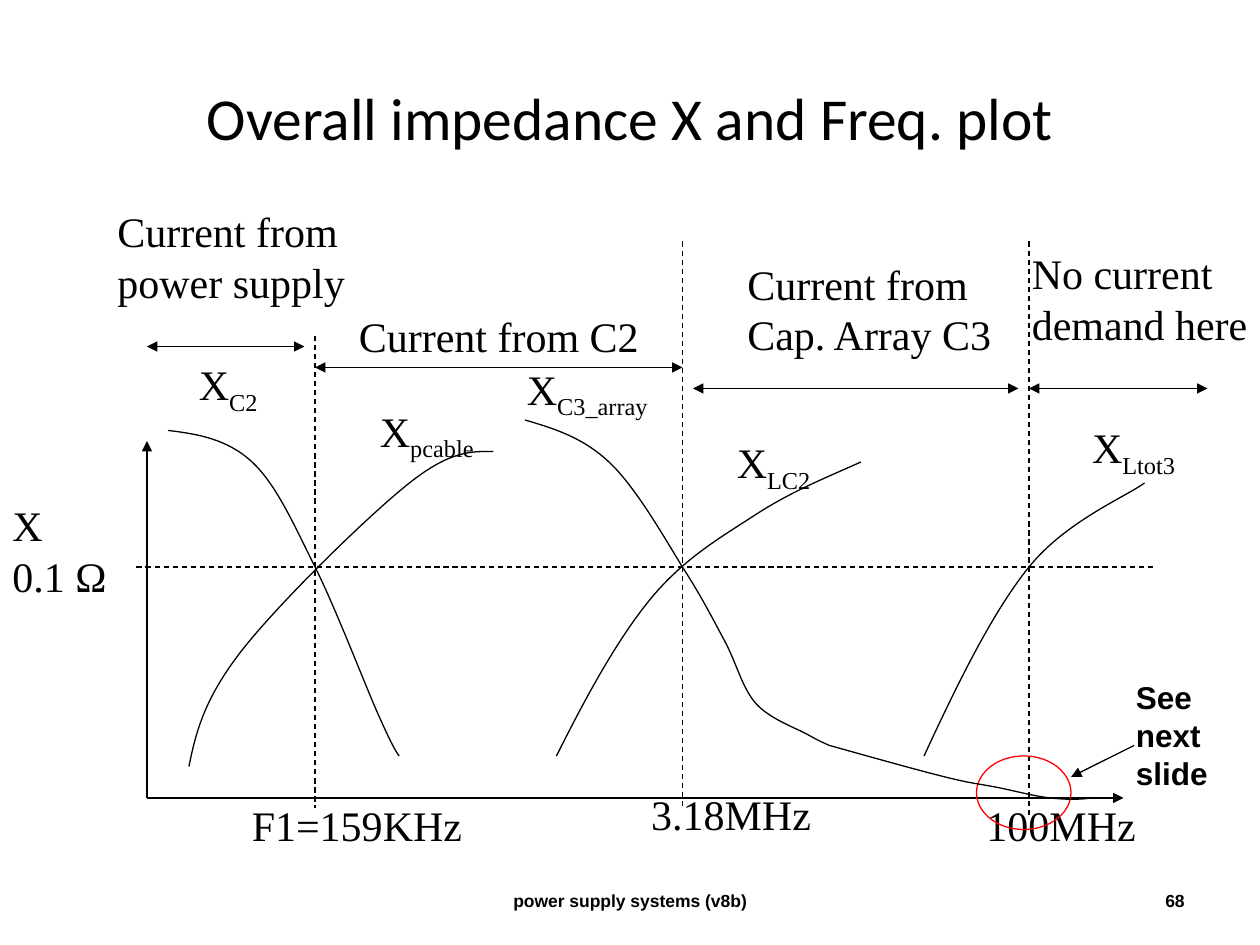
import pptx
import pptx.util
import pptx.dml.color
import pptx.enum.dml
import pptx.enum.shapes
import pptx.enum.text
import pptx.oxml
from dataclasses import dataclass

Pt = pptx.util.Pt
Align = pptx.enum.text.PP_ALIGN
Anchor = pptx.enum.text.MSO_ANCHOR


@dataclass
class Theme:
    ink: str = "000000"
    mark: str = "FF0000"
    width: float = 0.75
    head: str = "Calibri"
    sans: str = "Arial"
    serif: str = "Times New Roman"
    title: int = 34
    body: int = 24
    note: int = 18
    foot: int = 10


def write(par, text, font, size, color, bold=False, sub=False):
    """Add one run of formatted text to a paragraph."""
    run = par.add_run()
    run.text = text
    run.font.name = font
    run.font.size = Pt(size)
    run.font.bold = bold
    run.font.color.rgb = pptx.dml.color.RGBColor.from_string(color)
    if sub:
        run.font._element.set("baseline", "-25000")


def node(tag, rest=""):
    """Make one empty drawing element."""
    space = pptx.oxml.ns.nsdecls("a")
    return pptx.oxml.parse_xml(f"<a:{tag} {space} {rest}/>")


class Plot:
    def __init__(self, slide, theme):
        self.shapes = slide.shapes
        self.theme = theme

    def text(self, box, lines, font=None, size=None, bold=False, sub="",
             align=Align.LEFT, anchor=Anchor.TOP, wrap=False):
        look = dict(font=font or self.theme.serif,
                    size=size or self.theme.body,
                    color=self.theme.ink, bold=bold)
        frame = self.shapes.add_textbox(*map(Pt, box)).text_frame
        frame.word_wrap = wrap
        frame.vertical_anchor = anchor
        for i, line in enumerate(lines.split("\n")):
            par = frame.add_paragraph() if i else frame.paragraphs[0]
            par.alignment = align
            write(par, line, **look)
        if sub:
            write(par, sub, sub=True, **look)

    def pen(self, line, color=None):
        line.color.rgb = pptx.dml.color.RGBColor.from_string(
            color or self.theme.ink)
        line.width = Pt(self.theme.width)

    def line(self, x1, y1, x2, y2, ends=(), dash=False):
        link = self.shapes.add_connector(
            pptx.enum.shapes.MSO_CONNECTOR.STRAIGHT,
            Pt(x1), Pt(y1), Pt(x2), Pt(y2))
        self.pen(link.line)
        if dash:
            link.line.dash_style = pptx.enum.dml.MSO_LINE.DASH
        props = link._element.spPr
        for end in ends:
            props.ln.append(node(f"{end}End", 'type="triangle"'))
        props.append(node("effectLst"))

    def curve(self, start, *parts):
        """Draw cubic Bezier parts, each (x1, y1, x2, y2, x, y)."""
        draft = self.shapes.build_freeform(Pt(start[0]), Pt(start[1]))
        draft.add_line_segments(
            [(Pt(part[i]), Pt(part[i + 1]))
             for part in parts for i in (0, 2, 4)], close=False)
        shape = draft.convert_to_shape()
        # Turn each three straight steps into one Bezier part
        steps = shape._element.xpath(".//a:lnTo")
        for i in range(0, len(steps), 3):
            bend = node("cubicBezTo")
            steps[i].addprevious(bend)
            for step in steps[i:i + 3]:
                bend.append(step[0])
                step.getparent().remove(step)
        self.outline(shape)

    def oval(self, box, color):
        self.outline(self.shapes.add_shape(
            pptx.enum.shapes.MSO_SHAPE.OVAL, *map(Pt, box)), color)

    def outline(self, shape, color=None):
        shape.shadow.inherit = False
        shape.fill.background()
        self.pen(shape.line, color)


def main():
    deck = pptx.Presentation()
    deck.slide_width, deck.slide_height = Pt(720), Pt(540)
    theme = Theme()
    plot = Plot(deck.slides.add_slide(deck.slide_layouts[6]), theme)

    # Title and footer
    plot.text((36, 21.6, 648, 90), "Overall impedance X and Freq. plot",
              font=theme.head, size=theme.title, align=Align.CENTER,
              anchor=Anchor.MIDDLE, wrap=True)
    for box, words, side in (
            ((246, 500.4, 228, 28.8), "power supply systems (v8b)",
             Align.CENTER),
            ((516, 500.4, 168, 28.8), "68", Align.RIGHT)):
        plot.text(box, words, font=theme.sans, size=theme.foot, bold=True,
                  align=side, anchor=Anchor.MIDDLE, wrap=True)

    # Axes
    left, base, level = 84, 456, 324
    plot.line(left, base, 642, base, ends=["tail"])
    plot.line(left, base, left, 252, ends=["tail"])

    # Rising curves: cable and inductances
    plot.curve((108, 438), (112, 418, 117, 399, 138, 372),
               (159, 345, 210, 295, 234, 276),
               (258, 257, 270, 258, 282, 258))
    plot.curve((318, 432), (335, 398, 353, 365, 372, 342),
               (391, 319, 412, 307, 432, 294),
               (452, 281, 472, 273, 492, 264))
    plot.curve((528, 432), (547, 391, 567, 350, 588, 324),
               (609, 298, 643, 284, 654, 276))

    # Impedance level
    plot.line(78, level, 660, level, dash=True)
    plot.text((0, 282, 75, 65), "X\n0.1 Ω")

    # Falling curves: capacitors
    plot.curve((96, 246), (113, 248, 130, 251, 144, 264),
               (158, 277, 168, 300, 180, 324),
               (192, 348, 208, 390, 216, 408),
               (224, 426, 226, 429, 228, 432))
    plot.curve((300, 240), (317, 245, 333, 250, 348, 264),
               (363, 278, 379, 306, 390, 324),
               (401, 341, 407, 353, 414, 366),
               (421, 379, 424, 393, 432, 402),
               (440, 411, 455, 416, 462, 420),
               (469, 424, 472, 425, 474, 426))

    # Curve names
    for x, y, wide, sub in ((106.6, 201.6, 50.4, "C2"),
                            (294, 204, 91.4, "C3_array"),
                            (210, 228, 73.4, "pcable"),
                            (414, 246, 60.5, "LC2"),
                            (617, 237.6, 67, "Ltot3")):
        plot.text((x, y, wide, 36), "X", sub=sub)

    # Crossing frequencies
    for x, top, end in ((180, 192, 462), (390, 138, 462), (588, 138, 468)):
        plot.line(x, top, x, end, dash=True)
    for x, y, wide, name in ((136.8, 453.6, 134.6, "F1=159KHz"),
                             (365, 447, 105.8, "3.18MHz"),
                             (556.6, 453.6, 100, "100MHz")):
        plot.text((x, y, wide, 36), name)

    # Current ranges
    for x1, x2, y, box, name, wrap in (
            (84, 174, 198, (60, 114, 150, 65),
             "Current from\npower supply", True),
            (180, 390, 210, (198, 174, 174.2, 36),
             "Current from C2", False),
            (396, 582, 222, (420, 144, 161.3, 65),
             "Current from\nCap. Array C3", False),
            (588, 690, 222, (582.5, 138, 137.5, 65),
             "No current\ndemand here", False)):
        plot.line(x1, y, x2, y, ends=["head", "tail"])
        plot.text(box, name, wrap=wrap)

    # Marked region, the curve's end and the note
    plot.oval((558, 432, 54, 42), theme.mark)
    plot.curve((474, 426), (499, 433, 524, 440, 540, 444),
               (556, 448, 560, 448, 570, 450),
               (580, 452, 591, 455, 600, 456),
               (609, 457, 617, 457, 624, 456))
    plot.text((642, 384, 56.2, 72), "See\nnext\nslide",
              font=theme.sans, size=theme.note, bold=True)
    plot.line(648, 426, 612, 444, ends=["tail"])

    deck.save("out.pptx")


if __name__ == "__main__":
    main()
